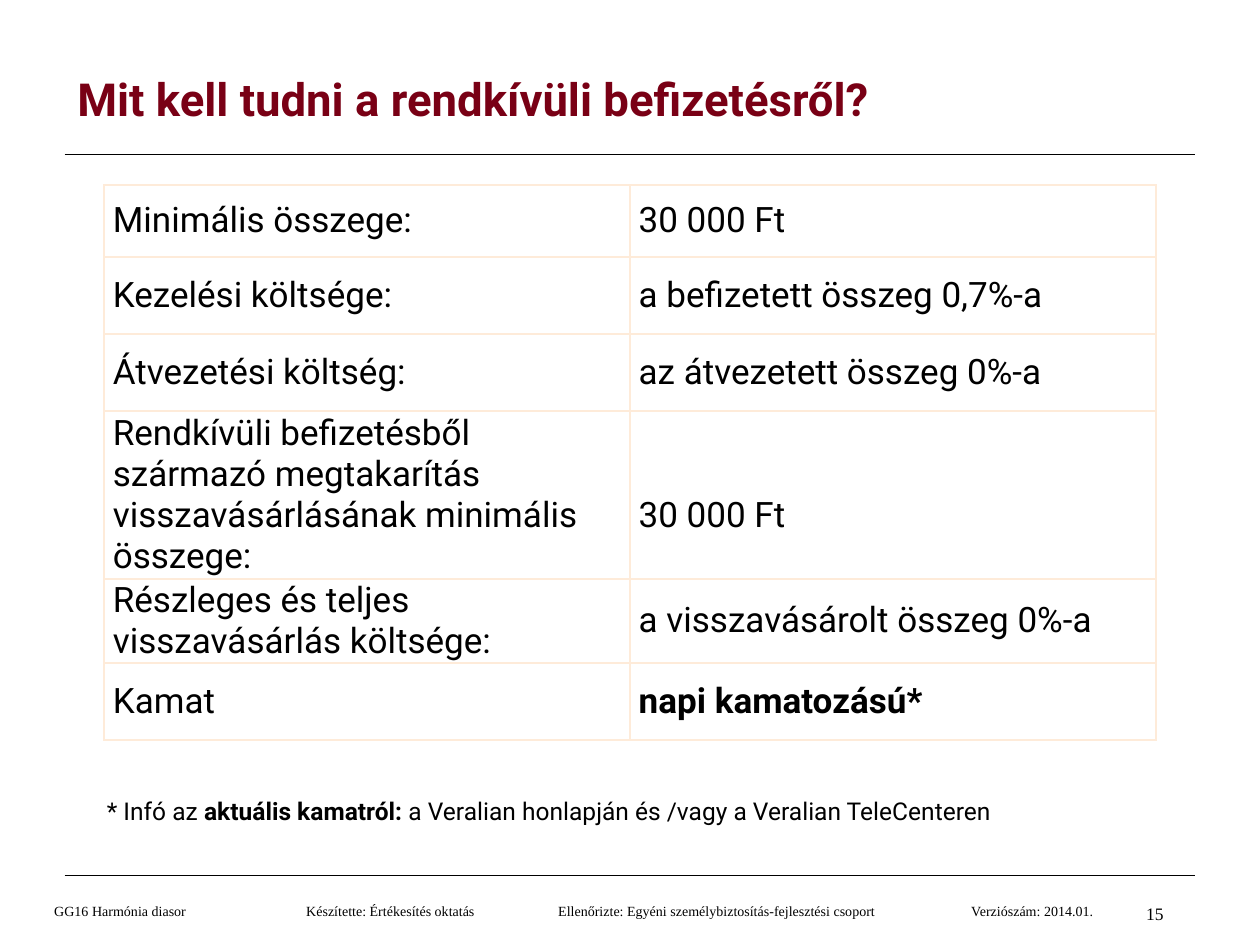
from lxml.etree import SubElement
from pptx import Presentation
from pptx.dml.color import RGBColor
from pptx.enum.shapes import MSO_CONNECTOR
from pptx.enum.text import MSO_ANCHOR, MSO_AUTO_SIZE, PP_ALIGN
from pptx.oxml.ns import qn
from pptx.util import Pt

TITLE = "Mit kell tudni a rendkívüli befizetésről?"
ROWS = [  # label, value, bold value, height, top margin of value
    ("Minimális összege:", "30 000 Ft", False, 41, 0),
    ("Kezelési költsége:", "a befizetett összeg 0,7%-a", False, 44, 0),
    ("Átvezetési költség:", "az átvezetett összeg 0%-a", False, 44, 0),
    ("Rendkívüli befizetésből származó megtakarítás "
     "visszavásárlásának minimális összege:", "30 000 Ft", False, 96, 24),
    ("Részleges és teljes visszavásárlás költsége:",
     "a visszavásárolt összeg 0%-a", False, 48, 0),
    ("Kamat", "napi kamatozású*", True, 44, 0),
]
NOTE = [
    ("* Infó az ", False),
    ("aktuális kamatról: ", True),
    ("a Veralian honlapján és /vagy a Veralian TeleCenteren", False),
]
FOOT = [
    "GG16 Harmónia diasor",
    "Készítette: Értékesítés oktatás",
    "Ellenőrizte: Egyéni személybiztosítás-fejlesztési csoport",
    "Verziószám: 2014.01.",
]
TABS = [144, 288, 524]
PAGE = "15"
COLORS = {"text": "000000", "title": "790015", "grid": "FEEBD9"}
SANS, SERIF = "Roboto", "Times New Roman"


def add_run(para, text, size, font=SANS, color="text", bold=False):
    run = para.add_run()
    run.text = text
    run.font.size = Pt(size)
    run.font.name = font
    run.font.bold = bold
    run.font.color.rgb = RGBColor.from_string(COLORS[color])


def add_box(slide, left, top, width, height, inset=True):
    frame = slide.shapes.add_textbox(
        Pt(left), Pt(top), Pt(width), Pt(height)).text_frame
    frame.word_wrap = True
    if not inset:
        frame.margin_left = frame.margin_right = 0
        frame.margin_top = frame.margin_bottom = 0
    return frame


def add_rule(slide, y):
    line = slide.shapes.add_connector(
        MSO_CONNECTOR.STRAIGHT, Pt(37), Pt(y), Pt(683), Pt(y))
    line.line.color.rgb = RGBColor.from_string(COLORS["text"])
    line.line.width = Pt(0.5)
    SubElement(line._element.spPr, qn("a:effectLst"))


def add_edges(cell):
    """Draw the four cell borders; they must come before the fill."""
    props = cell._tc.get_or_add_tcPr()
    for spot, side in enumerate("LRTB"):
        edge = SubElement(props, qn(f"a:ln{side}"), w=str(Pt(1)))
        fill = SubElement(edge, qn("a:solidFill"))
        SubElement(fill, qn("a:srgbClr"), val=COLORS["grid"])
        props.insert(spot, edge)


def fill_cell(cell, text, bold=False, top=0, align=PP_ALIGN.LEFT):
    cell.fill.background()
    add_edges(cell)
    cell.vertical_anchor = MSO_ANCHOR.MIDDLE
    cell.margin_left = cell.margin_right = Pt(5)
    cell.margin_top, cell.margin_bottom = Pt(top), 0
    para = cell.text_frame.paragraphs[0]
    para.alignment = align
    add_run(para, text, 20, bold=bold)


def add_grid(slide):
    total = sum(row[3] for row in ROWS)
    table = slide.shapes.add_table(
        len(ROWS), 2, Pt(59.5), Pt(105.75), Pt(601), Pt(total)).table
    table.first_row = table.horz_banding = False
    for i, (label, value, bold, height, top) in enumerate(ROWS):
        table.rows[i].height = Pt(height)
        fill_cell(table.cell(i, 0), label)
        fill_cell(table.cell(i, 1), value, bold, top, PP_ALIGN.JUSTIFY)


def add_title(slide):
    title = slide.shapes.title
    title.left, title.top = Pt(37), Pt(26)
    title.width, title.height = Pt(612), Pt(60)
    frame = title.text_frame
    frame.auto_size = MSO_AUTO_SIZE.NONE
    frame.vertical_anchor = MSO_ANCHOR.MIDDLE
    para = frame.paragraphs[0]
    para.alignment = PP_ALIGN.LEFT
    add_run(para, TITLE, 26, color="title", bold=True)


def add_foot(slide):
    frame = add_box(slide, 31, 508.5, 670, 24.5, inset=False)
    frame.vertical_anchor = MSO_ANCHOR.MIDDLE
    para = frame.paragraphs[0]
    stops = SubElement(para._p.get_or_add_pPr(), qn("a:tabLst"))
    for tab in TABS:
        SubElement(stops, qn("a:tab"), pos=str(Pt(tab)), algn="l")
    add_run(para, "\t".join(FOOT), 8, SERIF)
    page = add_box(slide, 655, 516, 28, 12, inset=False)
    add_run(page.paragraphs[0], PAGE, 10, SERIF)


def main():
    deck = Presentation()
    deck.slide_width, deck.slide_height = Pt(720), Pt(540)
    slide = deck.slides.add_slide(deck.slide_layouts[5])
    for y in (88, 500.5):
        add_rule(slide, y)
    add_foot(slide)
    add_title(slide)
    add_grid(slide)
    note = add_box(slide, 54, 451.5, 618, 24.5).paragraphs[0]
    for text, bold in NOTE:
        add_run(note, text, 14, bold=bold)
    deck.save("out.pptx")


if __name__ == "__main__":
    main()
